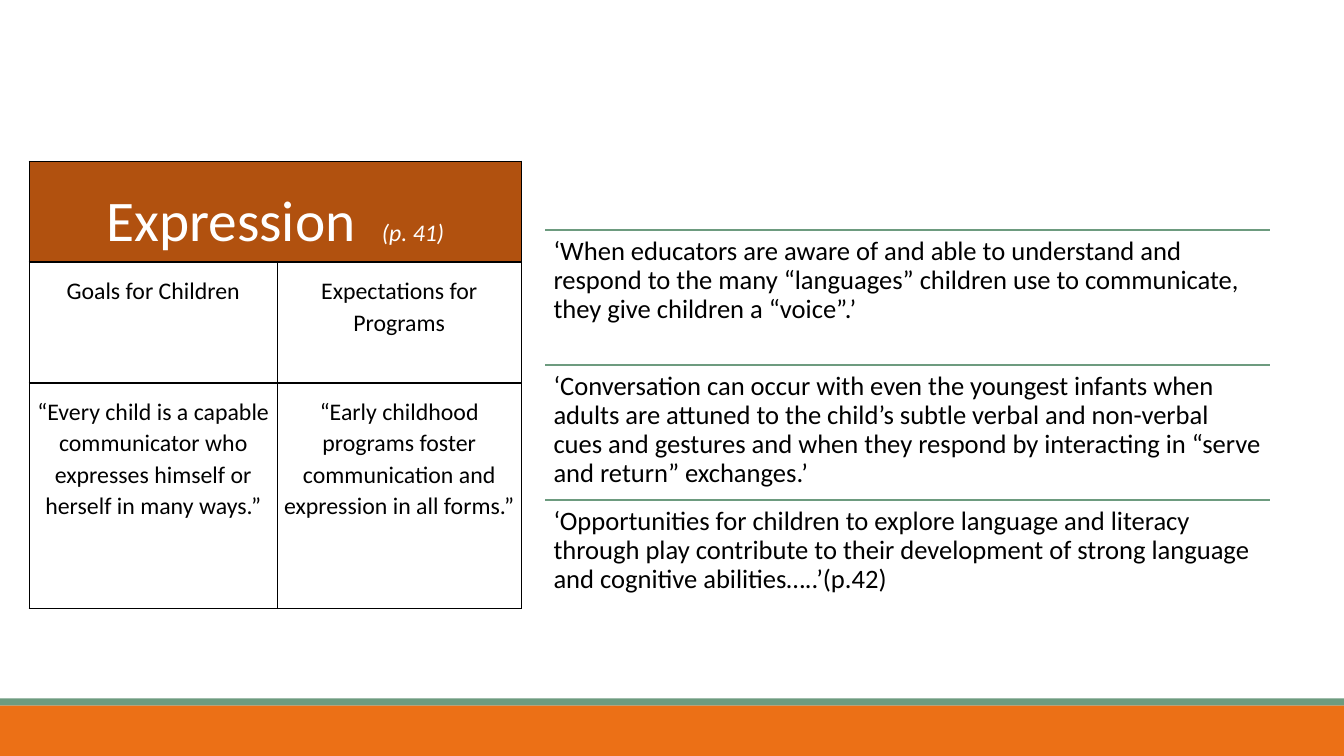
from dataclasses import dataclass

from pptx import Presentation
from pptx.dml.color import RGBColor
from pptx.enum.shapes import MSO_CONNECTOR, MSO_SHAPE
from pptx.enum.text import PP_ALIGN
from pptx.oxml.ns import qn
from pptx.util import Inches, Pt
from lxml.etree import SubElement


@dataclass(frozen=True)
class Theme:
    """Colours and type sizes of the slide."""
    font: str = "Calibri"
    white: str = "FFFFFF"
    black: str = "000000"
    grey: str = "808080"
    green: str = "6D9B7F"
    orange: str = "EC7016"
    rust: str = "B1510F"
    title: int = 41
    quote: int = 19
    body: int = 17


THEME = Theme()
TABLE_ROWS = [
    ["Goals for Children", "Expectations for Programs"],
    ["“Every child is a capable communicator who expresses himself or herself in many ways.”",
     "“Early childhood programs foster communication and expression in all forms.”"],
]
QUOTES = [
    "‘When educators are aware of and able to understand and respond to the many "
    "“languages” children use to communicate, they give children a “voice”.’",
    "‘Conversation can occur with even the youngest infants when adults are attuned to "
    "the child’s subtle verbal and non-verbal cues and gestures and when they respond by "
    "interacting in “serve and return” exchanges.’",
    "‘Opportunities for children to explore language and literacy through play contribute "
    "to their development of strong language and cognitive abilities…..’(p.42)",
]


def style_run(r, size, color, italic=False):
    """Set the font of a run."""
    r.font.name = THEME.font
    r.font.size = Pt(size)
    r.font.italic = italic
    r.font.color.rgb = RGBColor.from_string(color)


def add_rule(s, left, top, width, color, weight):
    """Draw a horizontal line without a shadow."""
    line = s.shapes.add_connector(MSO_CONNECTOR.STRAIGHT, Inches(left), Inches(top),
                                  Inches(left + width), Inches(top))
    line.line.color.rgb = RGBColor.from_string(color)
    line.line.width = Pt(weight)
    SubElement(line._element.spPr, qn("a:effectLst"))


def add_band(s, left, top, width, height, color):
    """Draw a plain filled band."""
    sp = s.shapes.add_shape(MSO_SHAPE.RECTANGLE, Inches(left), Inches(top),
                            Inches(width), Inches(height))
    sp.shadow.inherit = False
    sp.fill.solid()
    sp.fill.fore_color.rgb = RGBColor.from_string(color)
    sp.line.fill.background()


def style_cell(cell, fill, top_margin):
    """Give a cell its borders, fill, margins and centred text."""
    tcPr = cell._tc.get_or_add_tcPr()
    for side in ("a:lnL", "a:lnR", "a:lnT", "a:lnB"):
        ln = SubElement(tcPr, qn(side), w=str(Pt(1)))
        SubElement(SubElement(ln, qn("a:solidFill")), qn("a:srgbClr"), val=THEME.black)
    cell.fill.solid()
    cell.fill.fore_color.rgb = RGBColor.from_string(fill)
    cell.margin_left = cell.margin_right = Inches(0.06)
    cell.margin_top, cell.margin_bottom = Inches(top_margin), 0
    p = cell.text_frame.paragraphs[0]
    p.alignment = PP_ALIGN.CENTER
    p.line_spacing = 1.07


def add_goals_table(s, left, top, col_widths, row_heights):
    """Build the table of goals and expectations under its title row."""
    table = s.shapes.add_table(len(row_heights), len(col_widths), Inches(left), Inches(top),
                               Inches(sum(col_widths)), Inches(sum(row_heights))).table
    table.first_row = table.horz_banding = False
    for col, width in zip(table.columns, col_widths):
        col.width = Inches(width)
    for row, height in zip(table.rows, row_heights):
        row.height = Inches(height)

    title = table.cell(0, 0)
    title.merge(table.cell(0, 1))
    for cell in table.rows[0].cells:
        style_cell(cell, THEME.rust, 0.2)
    p = title.text_frame.paragraphs[0]
    for text, size, italic in (("Expression", THEME.title, False),
                               (" ", THEME.title, False),
                               ("(p. 41)", THEME.body, True)):
        r = p.add_run()
        r.text = text
        style_run(r, size, THEME.white, italic)
    p.runs[1]._r.get_or_add_rPr().set("spc", "930")

    for i, texts in enumerate(TABLE_ROWS, start=1):
        for j, text in enumerate(texts):
            cell = table.cell(i, j)
            cell.text_frame.text = text
            style_cell(cell, THEME.white, 0.13)
            style_run(cell.text_frame.paragraphs[0].runs[0], THEME.body, THEME.black)


def add_quotes(s, left, top, width, height):
    """Stack the quotes in equal steps, each under a green rule."""
    add_rule(s, left + 0.03, top, 6.66, THEME.grey, 0.5)
    step = height / len(QUOTES)
    for i, quote in enumerate(QUOTES):
        y = top + i * step
        add_rule(s, left, y, width, THEME.green, 1.25)
        tf = s.shapes.add_textbox(Inches(left), Inches(y), Inches(width),
                                  Inches(step)).text_frame
        tf.word_wrap = True
        tf.margin_left = tf.margin_right = tf.margin_top = tf.margin_bottom = Inches(0.08)
        tf.text = quote
        p = tf.paragraphs[0]
        p.line_spacing = 0.9
        style_run(p.runs[0], THEME.quote, THEME.black)


def add_footer(s, left, top, width, height):
    """Draw the green strip above the orange band."""
    strip = 0.07
    add_band(s, left, top, width, strip, THEME.green)
    add_band(s, left, top + strip, width, height - strip, THEME.orange)


def main():
    """Build and save the slide."""
    prs = Presentation()
    prs.slide_width, prs.slide_height = Inches(13.33), Inches(7.5)
    s = prs.slides.add_slide(prs.slide_layouts[6])
    add_footer(s, 0, 6.93, 13.33, 0.57)
    add_goals_table(s, 0.29, 1.6, [2.46, 2.42], [1, 1.2, 2.24])
    add_quotes(s, 5.41, 2.28, 7.19, 4.02)
    prs.save("out.pptx")


if __name__ == "__main__":
    main()
